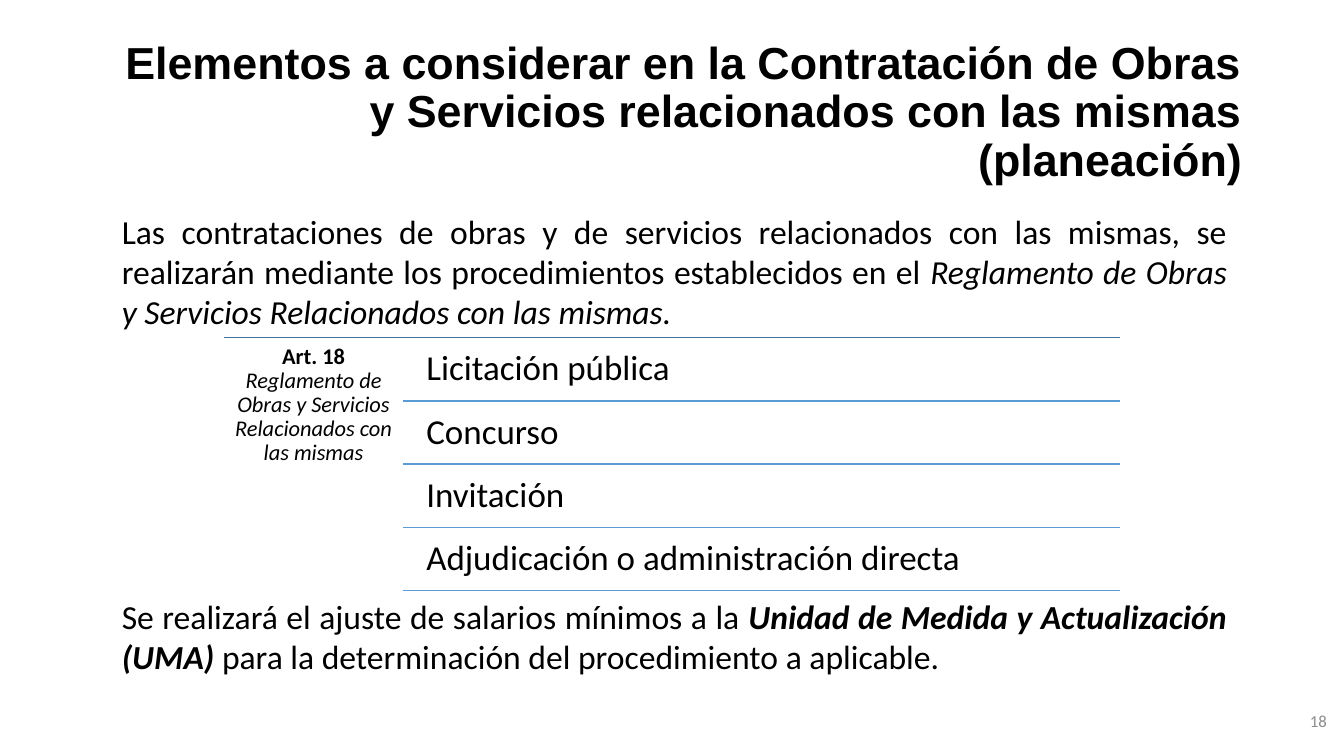
from lxml.etree import SubElement
from pptx import Presentation
from pptx.dml.color import RGBColor
from pptx.enum.shapes import MSO_CONNECTOR as LINE
from pptx.enum.text import MSO_ANCHOR as ANCHOR, PP_ALIGN as ALIGN
from pptx.oxml.ns import qn
from pptx.util import Inches, Pt

COLORS = {"text": "000000", "page": "8C8C8C", "top": "43739E", "rule": "5B9BD5"}
METHODS = ["Licitación pública", "Concurso", "Invitación",
           "Adjudicación o administración directa"]
LEFT, SPLIT, RIGHT = 2.22, 4, 11.11
TOP, BOTTOM = 3.35, 5.86
STEP = (BOTTOM - TOP) / len(METHODS)


def add_text(slide, box, runs, size=24, font="Calibri", color="text",
             align=ALIGN.LEFT, anchor=ANCHOR.TOP, spacing=None, inset=None):
    """Add one paragraph; each run is (text, style), style holding b and/or i."""
    shape = slide.shapes.add_textbox(*map(Inches, box))
    frame = shape.text_frame
    frame.word_wrap = True
    frame.vertical_anchor = anchor
    if inset is not None:
        frame.margin_left = frame.margin_right = Inches(inset)
        frame.margin_top = frame.margin_bottom = Inches(inset)
    para = frame.paragraphs[0]
    para.alignment = align
    if spacing:
        para.line_spacing = spacing
    for text, style in runs:
        run = para.add_run()
        run.text = text
        run.font.name = font
        run.font.size = Pt(size)
        run.font.bold = "b" in style
        run.font.italic = "i" in style
        run.font.color.rgb = RGBColor.from_string(COLORS[color])


def add_rule(slide, left, y, color):
    rule = slide.shapes.add_connector(
        LINE.STRAIGHT, Inches(left), Inches(y), Inches(RIGHT), Inches(y))
    rule.line.color.rgb = RGBColor.from_string(COLORS[color])
    rule.line.width = Pt(1)
    SubElement(rule.element.spPr, qn("a:effectLst"))


def add_methods(slide):
    add_rule(slide, LEFT, TOP, "top")
    add_text(slide, (LEFT, TOP, SPLIT - LEFT, BOTTOM - TOP),
             [("Art. 18 ", "b"),
              ("Reglamento de Obras y Servicios Relacionados con las mismas", "i")],
             size=16, align=ALIGN.CENTER, spacing=0.9, inset=0.07)
    for row, method in enumerate(METHODS):
        y = TOP + row * STEP
        add_text(slide, (4.13, y + 0.03, 6.98, 0.6), [(method, "")],
                 size=25, spacing=0.9, inset=0.1)
        add_rule(slide, SPLIT, y + STEP, "rule")


def main():
    deck = Presentation()
    deck.slide_width, deck.slide_height = Inches(13.33), Inches(7.5)
    slide = deck.slides.add_slide(deck.slide_layouts[6])
    add_text(slide, (0.92, 0.4, 11.5, 1.45),
             [("Elementos a considerar en la Contratación de Obras y Servicios "
               "relacionados con las mismas (planeación)", "b")],
             size=32, font="Arial", align=ALIGN.RIGHT, anchor=ANCHOR.MIDDLE,
             spacing=0.9)
    add_text(slide, (1.11, 2.04, 11.16, 1.31),
             [("Las contrataciones de obras y de servicios relacionados con las "
               "mismas, se realizarán mediante los procedimientos establecidos "
               "en el ", ""),
              ("Reglamento de Obras y Servicios Relacionados con las mismas. ", "i")],
             align=ALIGN.JUSTIFY)
    add_methods(slide)
    add_text(slide, (1.11, BOTTOM, 11.16, 0.91),
             [("Se realizará el ajuste de salarios mínimos a la ", ""),
              ("Unidad de Medida y Actualización (UMA) ", "bi"),
              ("para la determinación del procedimiento a aplicable.", "")],
             align=ALIGN.JUSTIFY)
    add_text(slide, (10.26, 6.95, 3, 0.4), [("18", "")], size=12, color="page",
             align=ALIGN.RIGHT, anchor=ANCHOR.MIDDLE)
    deck.save("out.pptx")


if __name__ == "__main__":
    main()
